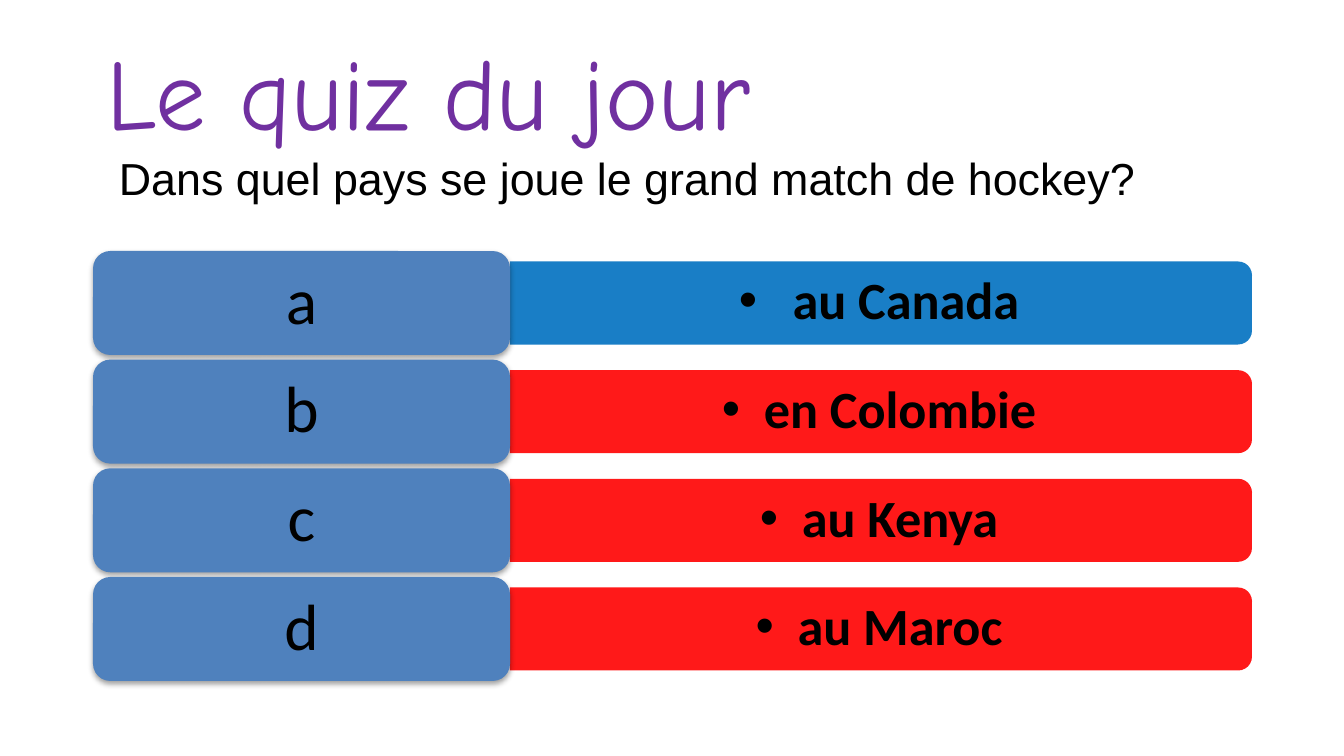
from dataclasses import dataclass

from lxml import etree
from pptx import Presentation
from pptx.dml.color import RGBColor
from pptx.enum.shapes import MSO_SHAPE
from pptx.enum.text import MSO_ANCHOR, MSO_AUTO_SIZE, PP_ALIGN
from pptx.oxml.ns import qn
from pptx.util import Emu, Pt

TITLE = "Le quiz du jour"
QUESTION = " Dans quel pays se joue le grand match de hockey?"
ANSWERS = [
    ("a", " au Canada", True),
    ("b", "en Colombie", False),
    ("c", "au Kenya", False),
    ("d", "au Maroc", False),
]


@dataclass(frozen=True)
class Theme:
    purple: str = "7030A0"
    black: str = "000000"
    tile: str = "4F81BD"
    right: str = "0070C0"
    wrong: str = "FF0000"
    title_font: str = "Comic Neue"
    question_font: str = "Arial"
    body_font: str = "Calibri"
    title_size: int = 54
    question_size: int = 24
    letter_size: int = 35
    answer_size: int = 28


T = Theme()
EMU_PER_PX = 914400 / 134.4
ROUND_RECT = MSO_SHAPE.ROUNDED_RECTANGLE
ROUND_TOP = MSO_SHAPE.ROUND_2_SAME_RECTANGLE
MIDDLE = MSO_ANCHOR.MIDDLE

LEFT, TOP, RIGHT, BOTTOM = 93, 251, 1252, 681
TILE_W, TILE_H = 417, 104
BAR_H = 83
PITCH = (BOTTOM - TOP - TILE_H) / (len(ANSWERS) - 1)
BAR_X = LEFT + TILE_W
BAR_W = RIGHT - BAR_X
HANG = 42


def px(n):
    return Emu(round(n * EMU_PER_PX))


def box(x, y, w, h):
    return px(x), px(y), px(w), px(h)


def add_run(p, text, font, size, color, bold=False):
    r = p.add_run()
    r.text = text
    r.font.name = font
    r.font.size = Pt(size)
    r.font.bold = bold
    r.font.color.rgb = RGBColor.from_string(color)


def add_panel(s, kind, frame, color):
    sp = s.shapes.add_shape(kind, *frame)
    sp.shadow.inherit = False
    sp.fill.solid()
    sp.fill.fore_color.rgb = RGBColor.from_string(color)
    sp.line.fill.background()
    return sp


def center_text(sp, inset_x, inset_y):
    tf = sp.text_frame
    tf.word_wrap = True
    tf.vertical_anchor = MIDDLE
    tf.margin_left = tf.margin_right = px(inset_x)
    tf.margin_top = tf.margin_bottom = px(inset_y)
    p = tf.paragraphs[0]
    p.alignment = PP_ALIGN.CENTER
    p.line_spacing = 0.9
    return p


def add_alpha(color_parent, percent):
    clr = color_parent.find(".//" + qn("a:srgbClr"))
    etree.SubElement(clr, qn("a:alpha"), val=str(percent * 1000))


def add_shadow(sp):
    effects = sp._element.spPr.find(qn("a:effectLst"))
    shadow = etree.SubElement(effects, qn("a:outerShdw"), blurRad=str(Pt(3.1)),
                              dist=str(Pt(1.6)), dir="5400000", rotWithShape="0")
    etree.SubElement(shadow, qn("a:srgbClr"), val=T.black)
    add_alpha(shadow, 38)


def add_bullet(p):
    ppr = p._p.get_or_add_pPr()
    ppr.set("marL", str(px(HANG)))
    ppr.set("indent", str(-px(HANG)))
    etree.SubElement(ppr, qn("a:buFont"), typeface=T.question_font)
    etree.SubElement(ppr, qn("a:buChar"), char="•")


def add_title(s):
    title = s.shapes.title
    title.left, title.top, title.width, title.height = box(LEFT, 27, RIGHT - LEFT, 181)
    tf = title.text_frame
    tf.auto_size = MSO_AUTO_SIZE.NONE
    tf.vertical_anchor = MIDDLE
    p = tf.paragraphs[0]
    p.alignment = PP_ALIGN.LEFT
    add_run(p, TITLE, T.title_font, T.title_size, T.purple)
    p.add_line_break()
    add_run(p, QUESTION, T.question_font, T.question_size, T.black)


def add_answer(s, y, letter, answer, correct):
    mid = y + TILE_H / 2
    bar_frame = box(BAR_X + (BAR_W - BAR_H) / 2, mid - BAR_W / 2, BAR_H, BAR_W)
    bar = add_panel(s, ROUND_TOP, bar_frame, T.right if correct else T.wrong)
    bar.rotation = 90
    add_alpha(bar._element.spPr.find(qn("a:solidFill")), 90)

    label = s.shapes.add_textbox(*box(BAR_X, mid - 38, BAR_W - 4, 76))
    p = center_text(label, 16, 8)
    add_bullet(p)
    add_run(p, answer, T.body_font, T.answer_size, T.black, True)

    tile = add_panel(s, ROUND_RECT, box(LEFT, y, TILE_W, TILE_H), T.tile)
    add_shadow(tile)
    p = center_text(tile, 20, 9)
    add_run(p, letter, T.body_font, T.letter_size, T.black)


def main():
    prs = Presentation()
    prs.slide_width, prs.slide_height = px(1344), px(756)
    s = prs.slides.add_slide(prs.slide_layouts[5])
    add_title(s)
    for i, row in enumerate(ANSWERS):
        add_answer(s, TOP + i * PITCH, *row)
    prs.save("out.pptx")


if __name__ == "__main__":
    main()
